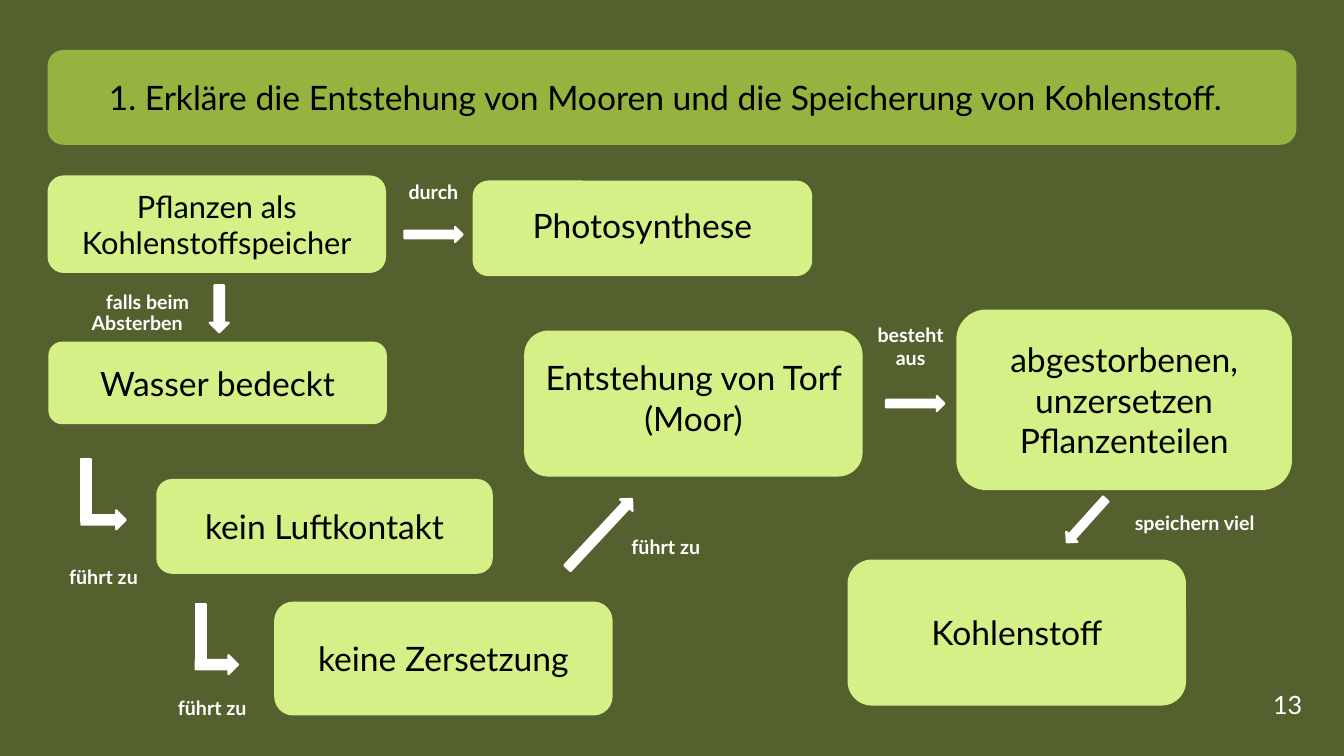
from pptx import Presentation
from pptx.dml.color import RGBColor
from pptx.enum.shapes import MSO_SHAPE as Preset
from pptx.enum.text import MSO_ANCHOR as Anchor, PP_ALIGN as Align
from pptx.util import Cm, Pt

MOSS, LEAF, LIME = "54612E", "96B340", "D5F086"
WHITE, BLACK = "FFFFFF", "000000"


def color(hex_code):
    return RGBColor.from_string(hex_code)


class ConceptMap:
    font = "Lato"

    def __init__(self, slide):
        self.slide = slide
        slide.background.fill.solid()
        slide.background.fill.fore_color.rgb = color(MOSS)

    def set_text(self, frame, text, size, ink, align, bold=False):
        frame.word_wrap = True
        frame.text = text
        paragraph = frame.paragraphs[0]
        paragraph.alignment = align
        font = paragraph.runs[0].font
        font.name, font.size, font.bold = self.font, Pt(size), bold
        font.color.rgb = color(ink)

    def solid(self, preset, box, fill):
        shape = self.slide.shapes.add_shape(preset, *map(Cm, box))
        shape.shadow.inherit = False
        shape.fill.solid()
        shape.fill.fore_color.rgb = color(fill)
        shape.line.fill.background()
        return shape

    def card(self, text, box, size=24, fill=LIME, raise_by=0, shift_left=0):
        """Rounded box; raise_by and shift_left widen the insets to move its text."""
        card = self.solid(Preset.ROUNDED_RECTANGLE, box, fill)
        frame = card.text_frame
        frame.vertical_anchor = Anchor.MIDDLE
        frame.margin_left = frame.margin_top = Cm(0.1)
        frame.margin_right = Cm(0.1 + shift_left)
        frame.margin_bottom = Cm(0.1 + raise_by)
        self.set_text(frame, text, size, BLACK, Align.CENTER)

    def label(self, text, box, align=Align.CENTER, size=14, bold=True):
        label = self.slide.shapes.add_textbox(*map(Cm, box))
        self.set_text(label.text_frame, text, size, WHITE, align, bold)

    def white_bar(self, box, preset=Preset.RECTANGLE, angle=0):
        bar = self.solid(preset, box, WHITE)
        bar.line.color.rgb = color(WHITE)
        bar.line.width = Pt(1.5)
        bar.rotation = angle

    def arrow(self, box, angle=0):
        self.white_bar(box, Preset.RIGHT_ARROW, angle)

    def corner_arrow(self, left, top, length):
        """Arrow that runs down and then turns right."""
        self.white_bar((left, top, 0.25, 1.57))
        self.arrow((left, top + 1.3, length, 0.48))


def main():
    deck = Presentation()
    deck.slide_width, deck.slide_height = Cm(33.87), Cm(19.05)
    moor = ConceptMap(deck.slides.add_slide(deck.slide_layouts[6]))

    moor.card("1. Erkläre die Entstehung von Mooren und die Speicherung von Kohlenstoff.",
              (1.2, 1.26, 31.47, 2.39), fill=LEAF, shift_left=0.33)
    moor.card("Pflanzen als Kohlenstoffspeicher", (1.2, 4.42, 8.53, 2.46), size=22)
    moor.card("Photosynthese", (11.91, 4.55, 8.56, 2.41), raise_by=0.18)
    moor.card("Wasser bedeckt", (1.22, 8.61, 8.53, 2.08))
    moor.card("kein Luftkontakt", (3.94, 12.07, 8.48, 2.39))
    moor.card("keine Zersetzung", (6.91, 15.16, 8.53, 2.87))
    moor.card("Entstehung von Torf (Moor)", (13.21, 8.33, 8.53, 3.68), raise_by=0.3)
    moor.card("abgestorbenen, unzersetzen Pflanzenteilen", (24.1, 7.8, 8.46, 4.55))
    moor.card("Kohlenstoff", (21.36, 14.1, 8.53, 3.68))

    moor.arrow((10.19, 5.72, 1.47, 0.38))
    moor.arrow((4.93, 7.54, 1.19, 0.48), angle=90)
    moor.corner_arrow(2.05, 11.56, 1.12)
    moor.corner_arrow(4.93, 15.21, 1.07)
    moor.arrow((13.92, 13.23, 2.39, 0.43), angle=313)
    moor.arrow((22.33, 9.98, 1.47, 0.38))
    moor.arrow((26.64, 12.93, 1.47, 0.38), angle=132)

    moor.label("durch", (9.96, 4.42, 1.93, 0.86))
    moor.label("falls beim", (2.08, 7.19, 3.28, 0.86))
    moor.label("Absterben", (2.06, 7.72, 5.61, 0.86), Align.LEFT)
    for left, top in ((1.2, 14.1), (3.94, 17.42), (15.37, 13.36)):
        moor.label("führt zu", (left, top, 2.82, 0.86))
    moor.label("besteht aus", (21.54, 8, 2.82, 1.45))
    moor.label("speichern viel", (28.35, 12.75, 4.8, 0.86), Align.LEFT)
    moor.label("13", (31.75, 17.25, 1.32, 1.02), Align.RIGHT, size=18, bold=False)

    deck.save("out.pptx")


if __name__ == "__main__":
    main()
